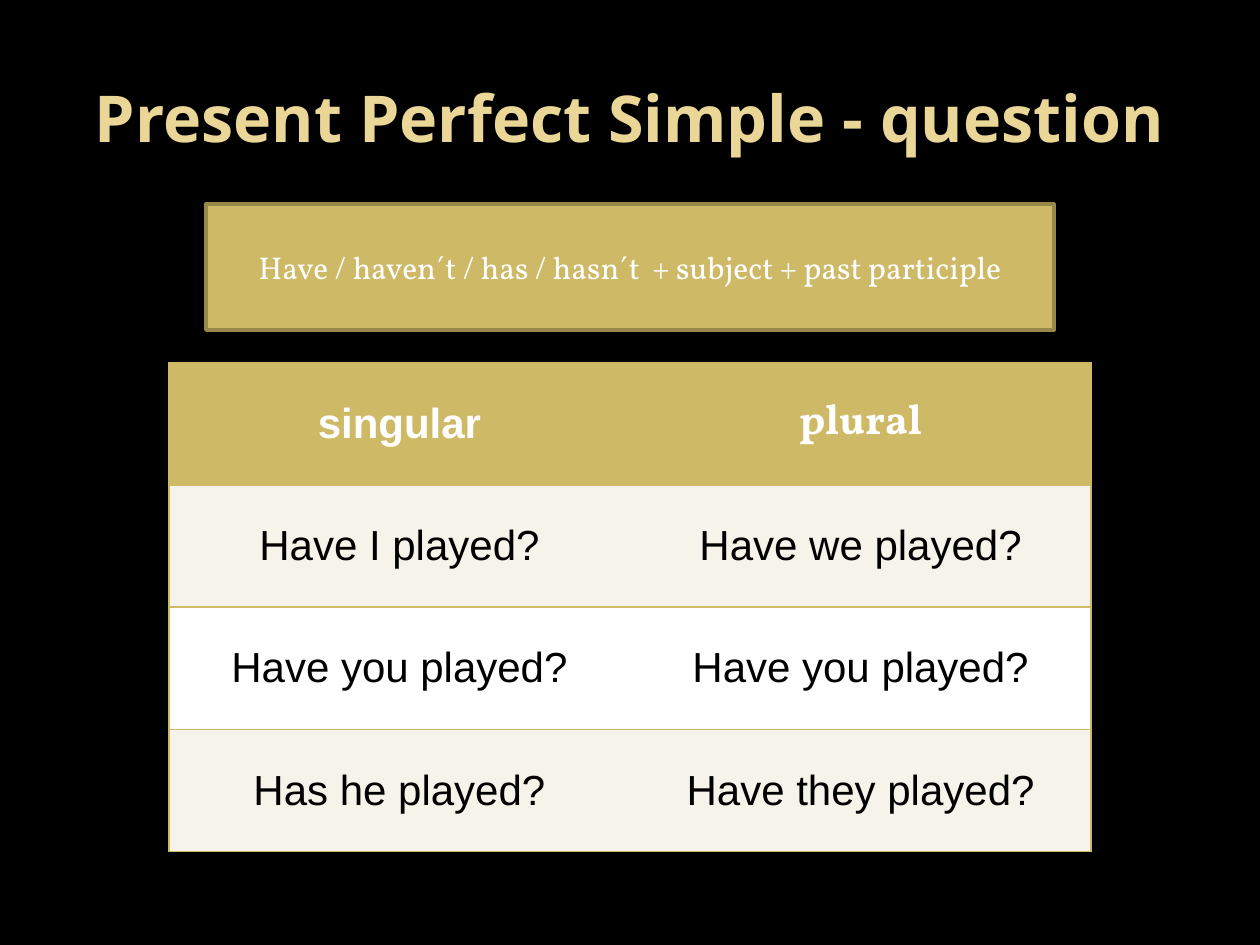
from dataclasses import dataclass

from lxml.etree import SubElement
from pptx import Presentation
from pptx.dml.color import RGBColor
from pptx.enum.shapes import MSO_SHAPE
from pptx.enum.text import MSO_ANCHOR, PP_ALIGN
from pptx.oxml.ns import qn
from pptx.util import Inches, Pt


@dataclass(frozen=True)
class Theme:
    background: str = "000000"
    title: str = "EAD696"
    gold: str = "CEB966"
    dark_gold: str = "98894B"
    cream: str = "F6F3EA"
    white: str = "FFFFFF"
    black: str = "000000"
    title_font: str = "Noto Sans"
    serif_font: str = "Vollkorn"
    sans_font: str = "Arial"
    title_size: float = 36.9
    formula_size: float = 18
    table_size: float = 24


THEME = Theme()
WIDTH, HEIGHT = 10, 7.5
ROWS = [
    ("singular", "plural"),
    ("Have I played?", "Have we played?"),
    ("Have you played?", "Have you played?"),
    ("Has he played?", "Have they played?"),
]


def centred_box(top, width, height):
    """Return left, top, width and height of a box centred on the slide."""
    return [Inches(n) for n in ((WIDTH - width) / 2, top, width, height)]


def paint(fill, color):
    fill.solid()
    fill.fore_color.rgb = RGBColor.from_string(color)


def write_text(frame, text, *, font, size, color, bold=False):
    frame.word_wrap = True
    frame.vertical_anchor = MSO_ANCHOR.MIDDLE
    paragraph = frame.paragraphs[0]
    paragraph.alignment = PP_ALIGN.CENTER
    run = paragraph.add_run()
    run.text = text
    run.font.name = font
    run.font.size = Pt(size)
    run.font.bold = bold
    run.font.color.rgb = RGBColor.from_string(color)


def set_borders(cell, colors):
    """Draw the sides L, R, T and B; a side without a colour stays open."""
    properties = cell._tc.get_or_add_tcPr()
    for side, color in colors.items():
        line = SubElement(properties, qn(f"a:ln{side}"), w=str(Pt(1)))
        if color:
            solid = SubElement(line, qn("a:solidFill"))
            SubElement(solid, qn("a:srgbClr"), val=color)
        else:
            SubElement(line, qn("a:noFill"))


def add_title(slide, text):
    title = slide.shapes.title
    title.left, title.top, title.width, title.height = centred_box(0.3, 9, 1.25)
    write_text(title.text_frame, text, font=THEME.title_font,
               size=THEME.title_size, color=THEME.title, bold=True)


def add_formula(slide, text):
    shape = slide.shapes.add_shape(MSO_SHAPE.RECTANGLE, *centred_box(1.62, 6.73, 1))
    shape.shadow.inherit = False
    paint(shape.fill, THEME.gold)
    paint(shape.line.fill, THEME.dark_gold)
    shape.line.width = Pt(2)
    write_text(shape.text_frame, text, font=THEME.serif_font,
               size=THEME.formula_size, color=THEME.white)


def add_forms_table(slide, rows):
    column_count = len(rows[0])
    frame = slide.shapes.add_table(len(rows), column_count,
                                   *centred_box(2.88, 7.32, 3.88))
    for row_index, row in enumerate(rows):
        header = row_index == 0
        band = THEME.cream if row_index % 2 else THEME.white
        for column_index, text in enumerate(row):
            cell = frame.table.cell(row_index, column_index)
            first, last = column_index == 0, column_index == column_count - 1
            # Only the outer edges and the row lines are drawn
            set_borders(cell, {"L": THEME.gold if first else None,
                               "R": THEME.gold if last else None,
                               "T": THEME.gold, "B": THEME.gold})
            paint(cell.fill, THEME.gold if header else band)
            cell.vertical_anchor = MSO_ANCHOR.MIDDLE
            write_text(cell.text_frame, text,
                       font=THEME.serif_font if header and last else THEME.sans_font,
                       size=THEME.table_size, bold=header,
                       color=THEME.white if header else THEME.black)


def main():
    presentation = Presentation()
    presentation.slide_width, presentation.slide_height = Inches(WIDTH), Inches(HEIGHT)
    slide = presentation.slides.add_slide(presentation.slide_layouts[5])
    paint(slide.background.fill, THEME.background)
    add_title(slide, "Present Perfect Simple - question")
    add_forms_table(slide, ROWS)
    add_formula(slide, "Have / haven´t / has / hasn´t  + subject + past participle")
    presentation.save("out.pptx")


if __name__ == "__main__":
    main()
